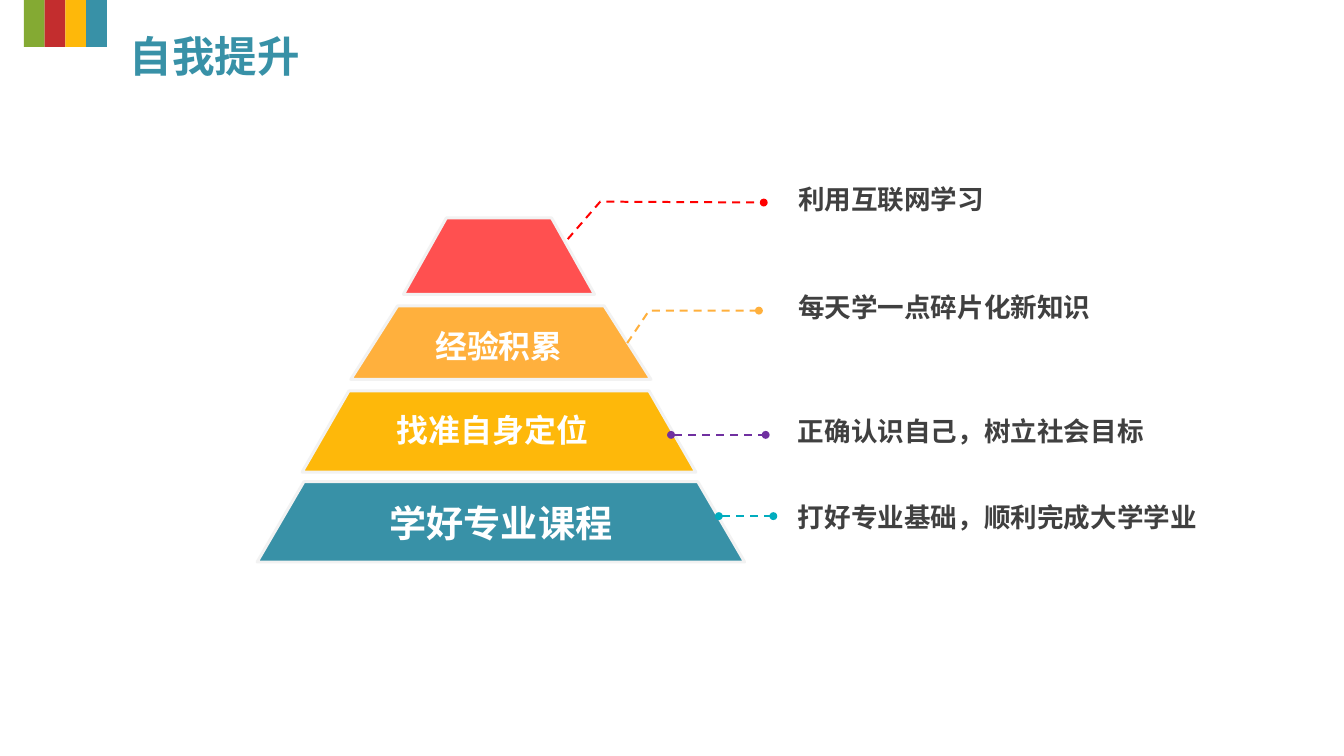
import pptx
import pptx.util
import pptx.dml.color
import pptx.enum.dml
import pptx.enum.shapes
import pptx.enum.text
import pptx.oxml.ns
import lxml.etree

CELL = pptx.util.Inches(0.1)
HEADING_FONT = "Noto Sans CJK SC"
BODY_FONT = "Calibri"
TEAL, YELLOW, ORANGE, CORAL = "3891A7", "FEB80A", "FFB03D", "FF5050"


def color(value):
    return pptx.dml.color.RGBColor.from_string(value)


def write(box, wording, size, face, ink, align):
    paragraph = box.text_frame.paragraphs[0]
    paragraph.alignment = align
    run = paragraph.add_run()
    run.text = wording
    run.font.size = pptx.util.Pt(size)
    run.font.bold = True
    run.font.color.rgb = color(ink)
    run.font.name = face
    east_asian = lxml.etree.Element(pptx.oxml.ns.qn("a:ea"), typeface=HEADING_FONT)
    run.font._element.find(pptx.oxml.ns.qn("a:latin")).addnext(east_asian)


deck = pptx.Presentation()
deck.slide_width = int(140.6 * CELL)
deck.slide_height = int(79.1 * CELL)
slide = deck.slides.add_slide(deck.slide_layouts[5])
shapes = slide.shapes
LEFT = pptx.enum.text.PP_ALIGN.LEFT
CENTER = pptx.enum.text.PP_ALIGN.CENTER

for column, stripe_color in enumerate(["84AA33", "C32D2E", YELLOW, TEAL]):
    stripe = shapes.add_shape(
        pptx.enum.shapes.MSO_SHAPE.RECTANGLE,
        int((2.5 + 2.17 * column) * CELL), 0, int(2.17 * CELL), int(4.9 * CELL),
    )
    stripe.shadow.inherit = False
    stripe.fill.solid()
    stripe.fill.fore_color.rgb = color(stripe_color)
    stripe.line.fill.background()

heading = shapes.title
heading.left, heading.top = int(12.6 * CELL), int(2.6 * CELL)
heading.width, heading.height = int(24.6 * CELL), int(6.4 * CELL)
heading.text_frame.vertical_anchor = pptx.enum.text.MSO_ANCHOR.MIDDLE
write(heading, "自我提升", 32, HEADING_FONT, TEAL, LEFT)

tiers = [
    (52.4, 20.6, 25.5, 50.4, 58.8, TEAL),
    (52.2, 15.7, 20.6, 40.9, 49.4, YELLOW),
    (52.4, 10.8, 15.7, 32.0, 39.7, ORANGE),
    (52.2, 5.5, 10.0, 22.8, 30.8, CORAL),
]
for middle, half_top, half_base, top, base, tier_color in tiers:
    outline = shapes.build_freeform(
        int((middle - half_top) * CELL), int(top * CELL), scale=1.0
    )
    outline.add_line_segments([
        (int((middle + half_top) * CELL), int(top * CELL)),
        (int((middle + half_base) * CELL), int(base * CELL)),
        (int((middle - half_base) * CELL), int(base * CELL)),
    ], close=True)
    tier = outline.convert_to_shape()
    tier.shadow.inherit = False
    tier.fill.solid()
    tier.fill.fore_color.rgb = color(tier_color)
    tier.line.color.rgb = color("F2F2F2")
    tier.line.width = pptx.util.Pt(2.25)
peak = tier

callouts = [
    ("01ACBE", [(75.2, 54.0), (80.9, 54.0)]),
    ("7030A0", [(70.2, 45.5), (80.1, 45.5)]),
    (ORANGE, [(64.6, 37.4), (67.9, 32.5), (79.4, 32.5)]),
    ("FF0000", [(58.2, 26.4), (62.8, 21.1), (79.9, 21.2)]),
]
for callout_color, stops in callouts:
    start, *bends = [(int(x * CELL), int(y * CELL)) for x, y in stops]
    if len(bends) == 1:
        callout = shapes.add_connector(
            pptx.enum.shapes.MSO_CONNECTOR.STRAIGHT, *start, *bends[0]
        )
        lxml.etree.SubElement(
            callout._element.spPr, pptx.oxml.ns.qn("a:effectLst")
        )
    else:
        route = shapes.build_freeform(*start, scale=1.0)
        route.add_line_segments(bends, close=False)
        callout = route.convert_to_shape()
        callout.shadow.inherit = False
        callout.fill.background()
    callout.line.color.rgb = color(callout_color)
    callout.line.width = pptx.util.Pt(1.5)
    callout.line.dash_style = pptx.enum.dml.MSO_LINE.DASH
    stroke = callout._element.spPr.find(pptx.oxml.ns.qn("a:ln"))
    for end in ("a:headEnd", "a:tailEnd"):
        lxml.etree.SubElement(stroke, pptx.oxml.ns.qn(end), type="oval")

peak._element.getparent().append(peak._element)

tier_labels = [
    ("学好专业课程", 28, 39.8, 52.0, 25.2, 5.2),
    ("找准自身定位", 24, 38.9, 42.7, 25.2, 4.5),
    ("经验积累", 24, 41.0, 33.9, 22.4, 4.5),
]
for wording, size, left, top, width, height in tier_labels:
    label = shapes.add_textbox(
        int(left * CELL), int(top * CELL), int(width * CELL), int(height * CELL)
    )
    frame = label.text_frame
    frame.word_wrap = True
    frame.auto_size = pptx.enum.text.MSO_AUTO_SIZE.SHAPE_TO_FIT_TEXT
    frame.margin_left = frame.margin_right = int(0.5 * CELL)
    frame.margin_top = frame.margin_bottom = int(0.3 * CELL)
    write(label, wording, size, HEADING_FONT, "FFFFFF", CENTER)

details = [
    ("打好专业基础，顺利完成大学学业", 51.9, 45.3),
    ("正确认识自己，树立社会目标", 42.9, 39.0),
    ("每天学一点碎片化新知识", 30.0, 35.1),
    ("利用互联网学习", 18.7, 33.8),
]
for wording, top, width in details:
    detail = shapes.add_textbox(
        int(82.5 * CELL), int(top * CELL), int(width * CELL), int(4.4 * CELL)
    )
    detail.text_frame.word_wrap = True
    detail.text_frame.auto_size = pptx.enum.text.MSO_AUTO_SIZE.SHAPE_TO_FIT_TEXT
    write(detail, wording, 20, BODY_FONT, "404040", LEFT)

deck.save("out.pptx")
